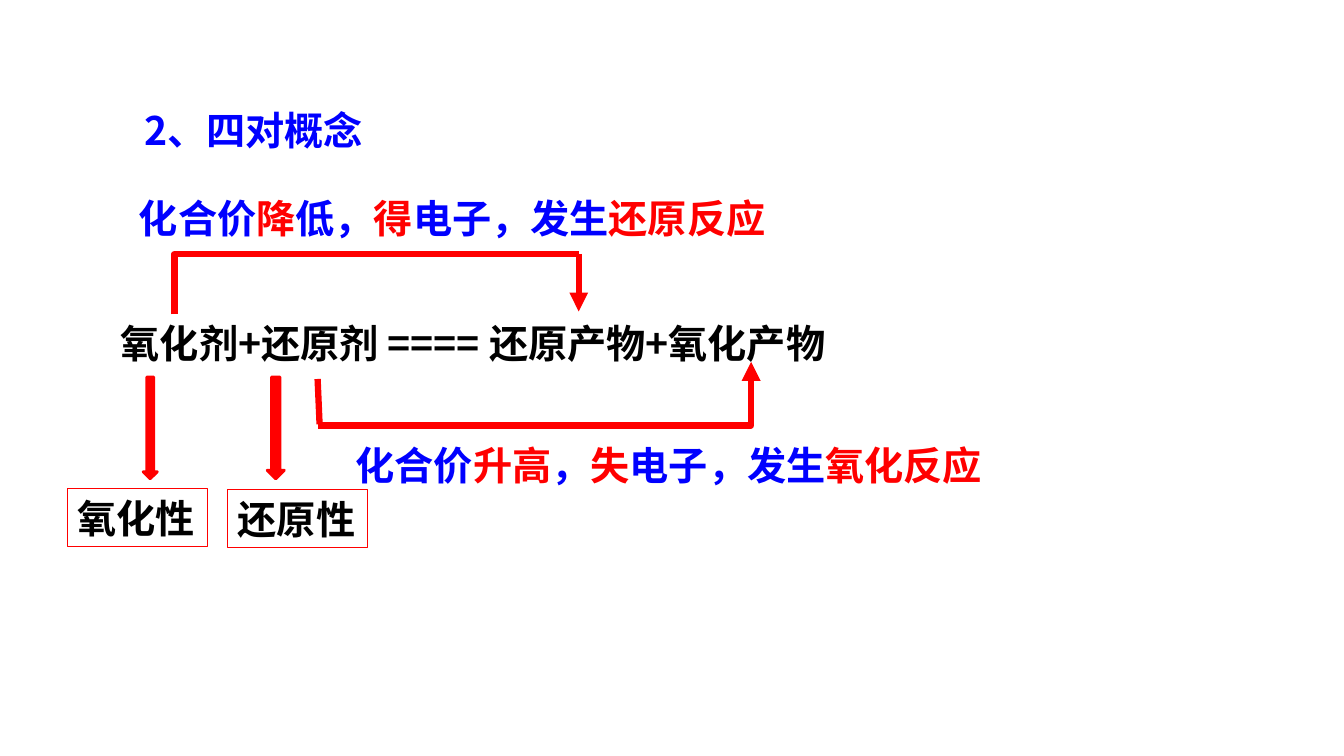
"""Builds the slide on the four pairs of redox concepts."""
from dataclasses import dataclass

from lxml import etree
from pptx import Presentation
from pptx import util as u
from pptx.dml.color import RGBColor
from pptx.enum import shapes, text
from pptx.oxml.ns import qn

PX = 9144
RED, BLUE, BLACK = "FF0000", "0000FF", "000000"
SANS, SERIF, ARIAL = "Noto Sans CJK SC", "Times New Roman", "Arial"


@dataclass
class Run:
    """A stretch of text with one colour and font."""
    text: str
    color: str
    font: str = SANS


@dataclass
class Label:
    """A line of text, framed in red or plain."""
    left: int
    top: int
    width: int
    runs: list[Run]
    framed: bool = False


@dataclass
class Path:
    """An open red line through points, with or without an arrowhead."""
    points: list[tuple[int, int]]
    arrow: bool = False


@dataclass
class BlockArrow:
    """A filled arrow pointing down."""
    left: int
    width: int


def px(n: int) -> u.Emu:
    """Turns px into EMU."""
    return u.Emu(n * PX)


def rgb(color: str) -> RGBColor:
    """Turns a hex string into a colour."""
    return RGBColor.from_string(color)


def set_line(sp, width: float) -> None:
    """Gives a shape a red line."""
    sp.line.color.rgb = rgb(RED)
    sp.line.width = u.Pt(width)


def add_label(slide, label: Label) -> None:
    """Draws a label."""
    box = [px(n) for n in (label.left, label.top, label.width, 57)]
    if label.framed:
        sp = slide.shapes.add_shape(shapes.MSO_SHAPE.RECTANGLE, *box)
        sp.shadow.inherit = False
        sp.fill.background()
        set_line(sp, 0.75)
    else:
        sp = slide.shapes.add_textbox(*box)
    tf = sp.text_frame
    tf.word_wrap = not label.framed
    tf.auto_size = text.MSO_AUTO_SIZE.SHAPE_TO_FIT_TEXT
    tf.vertical_anchor = text.MSO_ANCHOR.TOP
    p = tf.paragraphs[0]
    p.alignment = text.PP_ALIGN.LEFT
    for run in label.runs:
        r = p.add_run()
        r.text = run.text
        r.font.size = u.Pt(28)
        r.font.bold = True
        r.font.color.rgb = rgb(run.color)
        r.font.name = run.font
        ea = etree.SubElement(r.font._element, qn("a:ea"))
        ea.set("typeface", SANS)


def add_path(slide, path: Path) -> None:
    """Draws a straight line as a connector and a bent one as a freeform."""
    start, *rest = [(px(x), px(y)) for x, y in path.points]
    if len(rest) == 1:
        sp = slide.shapes.add_connector(
            shapes.MSO_CONNECTOR.STRAIGHT, *start, *rest[0])
        set_line(sp, 4.5)
        if path.arrow:
            etree.SubElement(sp.line._get_or_add_ln(), qn("a:tailEnd"), type="triangle")
        etree.SubElement(sp._element.spPr, qn("a:effectLst"))
    else:
        builder = slide.shapes.build_freeform(*start)
        builder.add_line_segments(rest, close=False)
        sp = builder.convert_to_shape()
        sp.shadow.inherit = False
        sp.fill.background()
        set_line(sp, 4.5)


def add_block_arrow(slide, arrow: BlockArrow) -> None:
    """Draws a block arrow."""
    sp = slide.shapes.add_shape(
        shapes.MSO_SHAPE.DOWN_ARROW, px(arrow.left), px(374), px(arrow.width), px(101))
    sp.shadow.inherit = False
    sp.fill.solid()
    sp.fill.fore_color.rgb = rgb(RED)
    set_line(sp, 2)


LABELS = [
    Label(110, 312, 887, [Run("氧化剂+还原剂 ==== 还原产物+氧化产物", BLACK)]),
    Label(133, 101, 441, [Run("2、四对概念", BLUE)]),
    Label(128, 188, 872, [
        Run("化合价", BLUE, SERIF), Run("降", RED, SERIF), Run("低，", BLUE, SERIF),
        Run("得", RED, ARIAL), Run("电子，发生", BLUE, ARIAL), Run("还原反应", RED, ARIAL)]),
    Label(343, 433, 804, [
        Run("化合价", BLUE, SERIF), Run("升高", RED, SERIF), Run("，", BLUE, SERIF),
        Run("失", RED, ARIAL), Run("电子，发生", BLUE, ARIAL), Run("氧化反应", RED, ARIAL)]),
    Label(67, 485, 139, [Run("氧化性", BLACK)], framed=True),
    Label(226, 486, 139, [Run("还原性", BLACK)], framed=True),
]
PATHS = [
    Path([(574, 252), (574, 309)], arrow=True),
    Path([(173, 312), (173, 252), (574, 252)]),
    Path([(745, 397), (745, 359)], arrow=True),
    Path([(745, 377), (745, 422), (315, 422)]),
    Path([(315, 376), (317, 421)]),
]
BLOCK_ARROWS = [BlockArrow(142, 14), BlockArrow(265, 17)]


def main() -> None:
    """Builds and saves the slide."""
    prs = Presentation()
    prs.slide_width, prs.slide_height = px(1333), px(750)
    slide = prs.slides.add_slide(prs.slide_layouts[6])
    for label in LABELS:
        add_label(slide, label)
    for path in PATHS:
        add_path(slide, path)
    for arrow in BLOCK_ARROWS:
        add_block_arrow(slide, arrow)
    prs.save("out.pptx")


if __name__ == "__main__":
    main()
